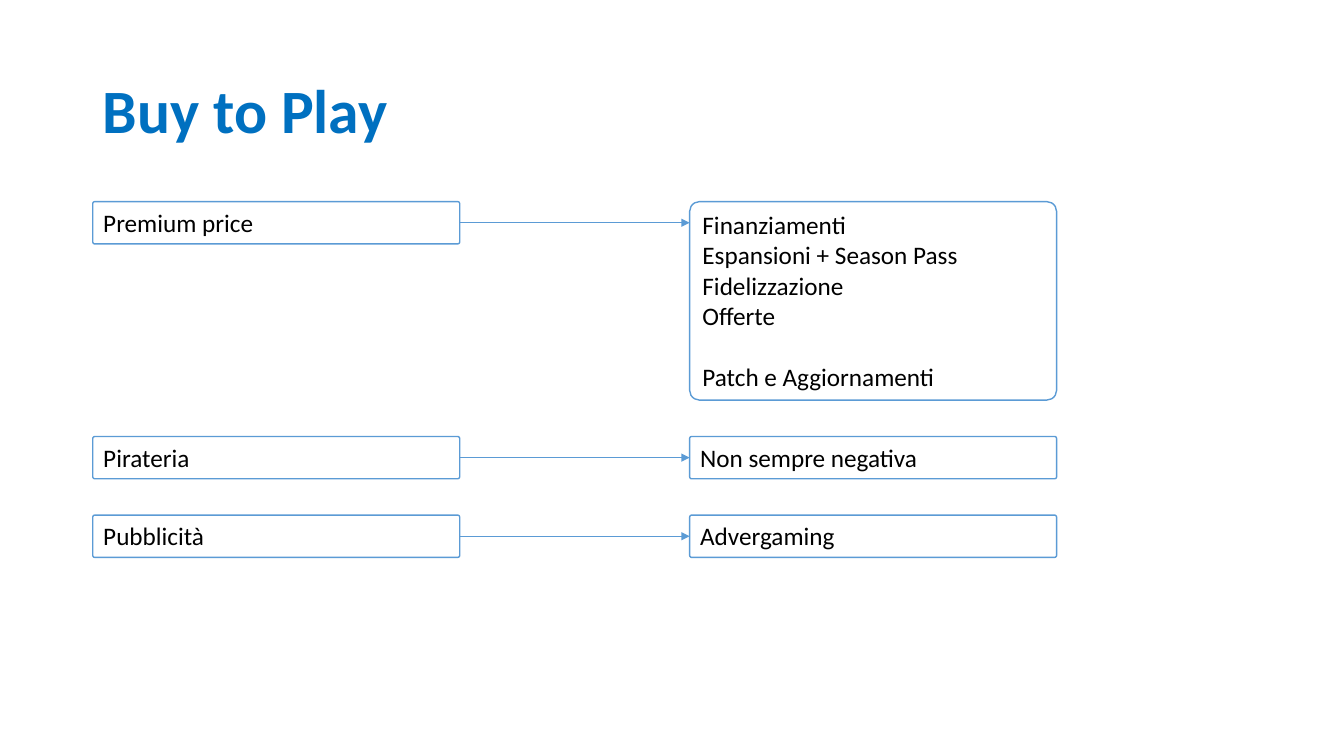
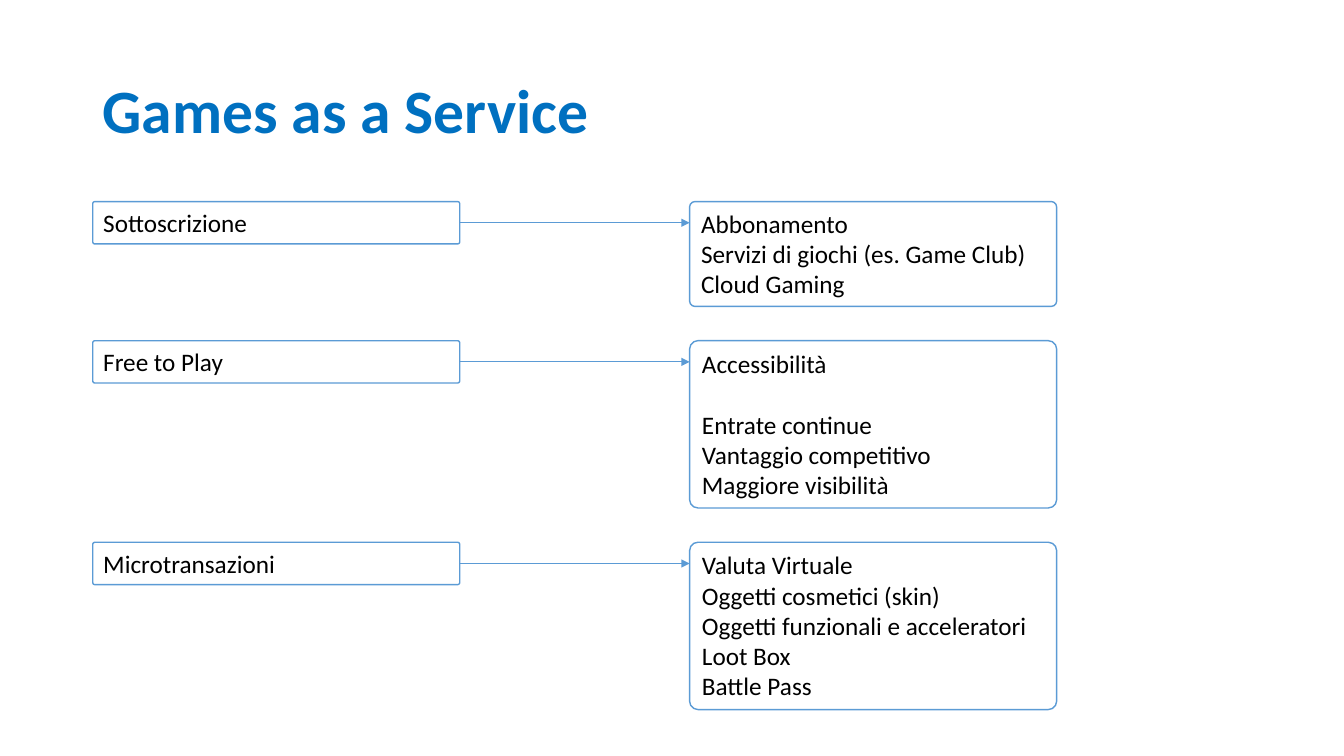
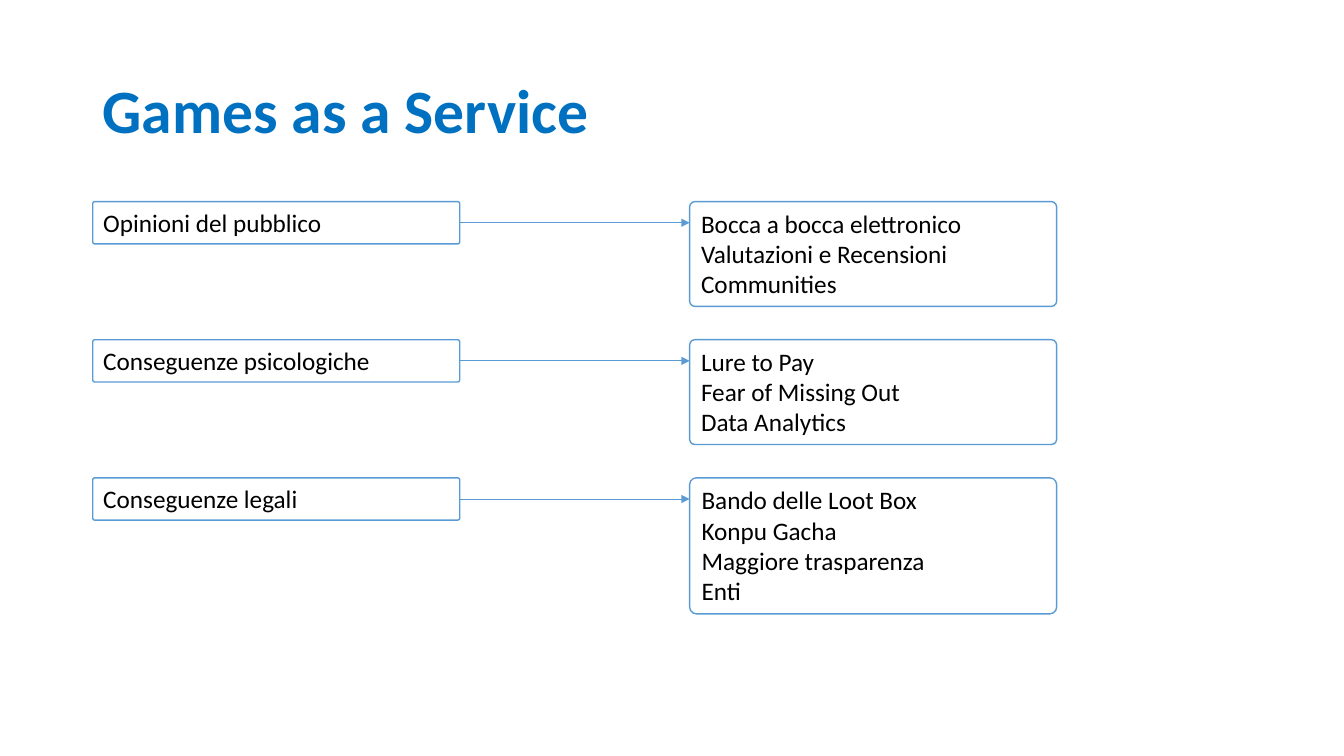
from dataclasses import dataclass

from lxml.etree import SubElement
from pptx import Presentation
from pptx.dml.color import RGBColor
from pptx.enum.shapes import MSO_CONNECTOR as Connector, MSO_SHAPE as Shape
from pptx.enum.text import MSO_ANCHOR as Anchor, MSO_AUTO_SIZE as AutoSize, PP_ALIGN as Align
from pptx.oxml.ns import qn
from pptx.shapes.autoshape import Shape as AutoShape
from pptx.slide import Slide
from pptx.util import Inches, Pt

TITLE_BLUE = RGBColor(0x00, 0x70, 0xC0)
OUTLINE_BLUE = RGBColor(0x5B, 0x9B, 0xD5)
WHITE = RGBColor(0xFF, 0xFF, 0xFF)
BLACK = RGBColor(0x00, 0x00, 0x00)
FONT = "Calibri"

TOPIC_LEFT = 0.92
DETAIL_LEFT = 6.84
BOX_WIDTH = 3.64
FIRST_TOP = 2.0
LINE_HEIGHT = 0.31
BOX_PADDING = 0.11
TOPIC_HEIGHT = BOX_PADDING + LINE_HEIGHT
CORNER = 0.05
GROUP_SPACE = Pt(22)

Groups = list[list[str]]


@dataclass(frozen=True)
class Row:
    topic: str
    details: Groups

    @property
    def height(self) -> float:
        lines = sum(len(group) for group in self.details) + len(self.details) - 1
        return BOX_PADDING + LINE_HEIGHT * lines


@dataclass(frozen=True)
class Page:
    title: str
    gap: float
    rows: list[Row]


PAGES = [
    Page("Buy to Play", 0.36, [
        Row("Premium price", [
            ["Finanziamenti", "Espansioni + Season Pass", "Fidelizzazione", "Offerte"],
            ["Patch e Aggiornamenti"],
        ]),
        Row("Pirateria", [["Non sempre negativa"]]),
        Row("Pubblicità", [["Advergaming"]]),
    ]),
    Page("Games as a Service", 0.34, [
        Row("Sottoscrizione", [
            ["Abbonamento", "Servizi di giochi (es. Game Club)", "Cloud Gaming"],
        ]),
        Row("Free to Play", [
            ["Accessibilità"],
            ["Entrate continue", "Vantaggio competitivo", "Maggiore visibilità"],
        ]),
        Row("Microtransazioni", [
            ["Valuta Virtuale", "Oggetti cosmetici (skin)",
             "Oggetti funzionali e acceleratori", "Loot Box", "Battle Pass"],
        ]),
    ]),
    Page("Games as a Service", 0.33, [
        Row("Opinioni del pubblico", [
            ["Bocca a bocca elettronico", "Valutazioni e Recensioni", "Communities"],
        ]),
        Row("Conseguenze psicologiche", [
            ["Lure to Pay", "Fear of Missing Out", "Data Analytics"],
        ]),
        Row("Conseguenze legali", [
            ["Bando delle Loot Box", "Konpu Gacha", "Maggiore trasparenza", "Enti"],
        ]),
    ]),
]


def add_title(slide: Slide, title: str) -> None:
    box = slide.shapes.add_textbox(Inches(0.92), Inches(0.4), Inches(11.5), Inches(1.45))
    frame = box.text_frame
    frame.word_wrap = True
    frame.vertical_anchor = Anchor.MIDDLE
    paragraph = frame.paragraphs[0]
    paragraph.text = title
    paragraph.line_spacing = 0.9
    font = paragraph.font
    font.name, font.size, font.bold = FONT, Pt(44), True
    font.color.rgb = TITLE_BLUE


def add_box(slide: Slide, left: float, top: float, height: float, groups: Groups) -> AutoShape:
    box = slide.shapes.add_shape(
        Shape.ROUNDED_RECTANGLE, Inches(left), Inches(top), Inches(BOX_WIDTH), Inches(height))
    box.adjustments[0] = CORNER
    box.shadow.inherit = False
    box.fill.solid()
    box.fill.fore_color.rgb = WHITE
    box.line.color.rgb = OUTLINE_BLUE
    box.line.width = Pt(1)
    frame = box.text_frame
    frame.word_wrap = True
    frame.auto_size = AutoSize.SHAPE_TO_FIT_TEXT
    frame.vertical_anchor = Anchor.TOP
    frame.text = "\n".join(line for group in groups for line in group)
    for paragraph in frame.paragraphs:
        paragraph.alignment = Align.LEFT
        font = paragraph.font
        font.name, font.size = FONT, Pt(18)
        font.color.rgb = BLACK
    start = 0
    for group in groups[:-1]:
        start += len(group)
        frame.paragraphs[start].space_before = GROUP_SPACE
    return box


def add_arrow(slide: Slide, topic: AutoShape, detail: AutoShape) -> None:
    middle = topic.top + topic.height // 2
    arrow = slide.shapes.add_connector(
        Connector.STRAIGHT, topic.left + topic.width, middle, detail.left, middle)
    arrow.begin_connect(topic, 3)
    if detail.height == topic.height:
        arrow.end_connect(detail, 1)
    arrow.line.color.rgb = OUTLINE_BLUE
    arrow.line.width = Pt(0.5)
    SubElement(arrow.line._get_or_add_ln(), qn("a:tailEnd"), type="triangle")
    SubElement(arrow._element.spPr, qn("a:effectLst"))


def add_page(presentation: Presentation, page: Page) -> None:
    slide = presentation.slides.add_slide(presentation.slide_layouts[6])
    add_title(slide, page.title)
    top = FIRST_TOP
    for row in page.rows:
        topic = add_box(slide, TOPIC_LEFT, top, TOPIC_HEIGHT, [[row.topic]])
        detail = add_box(slide, DETAIL_LEFT, top, row.height, row.details)
        add_arrow(slide, topic, detail)
        top += row.height + page.gap


def main() -> None:
    presentation = Presentation()
    presentation.slide_width = Inches(13.33)
    presentation.slide_height = Inches(7.5)
    for page in PAGES:
        add_page(presentation, page)
    presentation.save("out.pptx")


if __name__ == "__main__":
    main()
